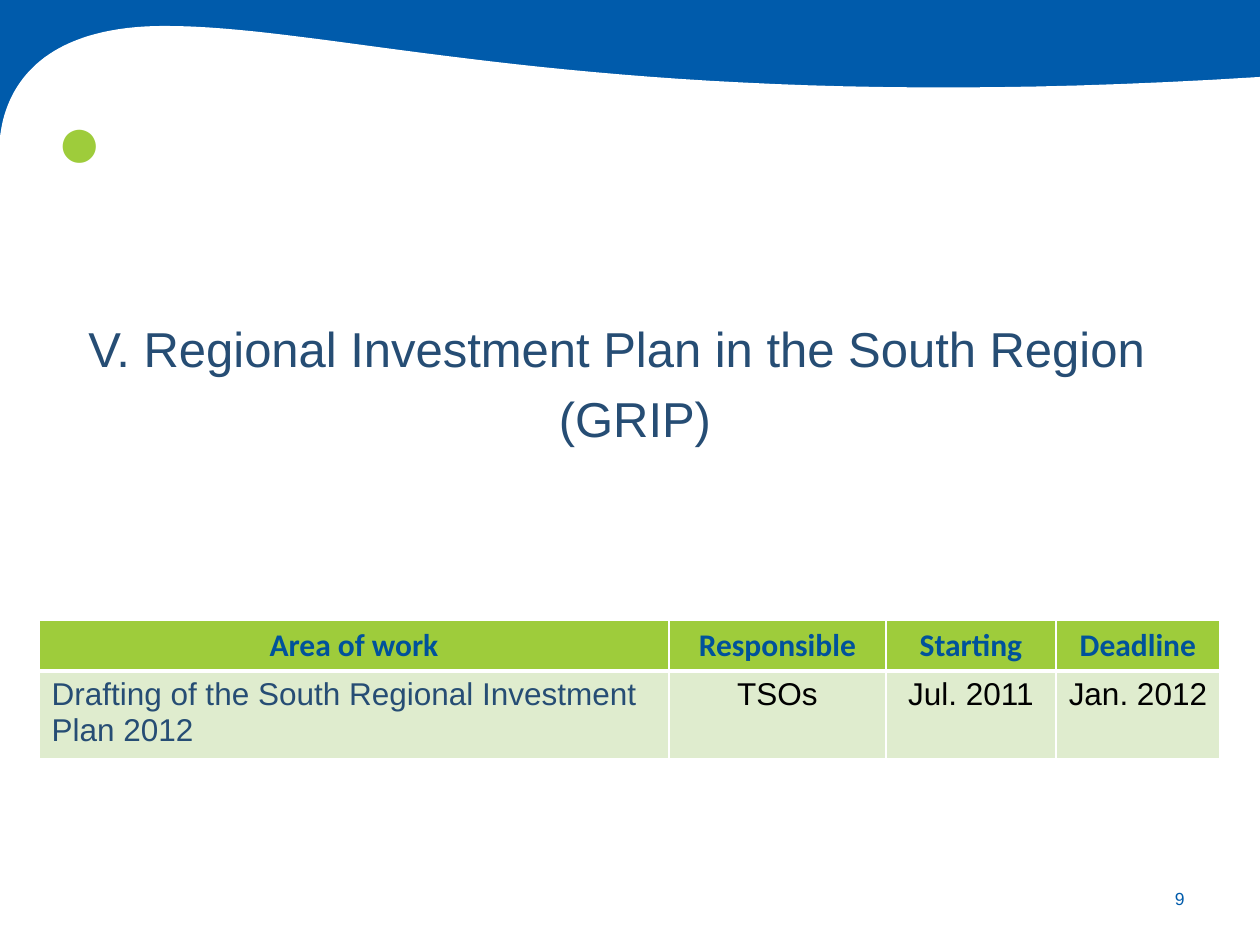
import lxml.etree
import pptx
import pptx.util
import pptx.dml.color
import pptx.enum.shapes
import pptx.enum.text
import pptx.oxml.ns

EMU_PER_PX = 914400 / 126
SLIDE_WIDTH, SLIDE_HEIGHT = 1260, 945
COLORS = {
    "blue": "005BAB",
    "header text": "00529B",
    "navy": "264D74",
    "green": "9ECC3B",
    "pale green": "DFECCE",
    "white": "FFFFFF",
    "black": "000000",
}
ALIGN = pptx.enum.text.PP_ALIGN
ANCHOR = pptx.enum.text.MSO_ANCHOR
WAVE_CURVES = [
    [(1260, 77), (617, 118), (348, 26), (165, 26)],
    [(165, 26), (29, 26), (4, 99), (0, 138)],
]
COLUMN_WIDTHS = [630, 217, 170, 164]
ROW_HEIGHTS = [51, 88]
TABLE_ROWS = [
    ["Area of work", "Responsible", "Starting", "Deadline"],
    ["Drafting of the South Regional Investment Plan 2012", "TSOs", "Jul. 2011", "Jan. 2012"],
]


def px(length):
    return pptx.util.Emu(round(length * EMU_PER_PX))


def color(name):
    return pptx.dml.color.RGBColor.from_string(COLORS[name])


def fill_plain(shape, color_name):
    shape.shadow.inherit = False
    shape.fill.solid()
    shape.fill.fore_color.rgb = color(color_name)
    shape.line.fill.background()


def curve_points(controls, steps=40):
    """Return points along a cubic Bezier curve."""
    for step in range(steps + 1):
        t = step / steps
        weights = [(1 - t) ** 3, 3 * t * (1 - t) ** 2, 3 * t * t * (1 - t), t ** 3]
        yield tuple(sum(w * point[axis] for w, point in zip(weights, controls)) for axis in (0, 1))


def add_wave_banner(slide):
    banner = slide.shapes.add_shape(
        pptx.enum.shapes.MSO_SHAPE.RECTANGLE, 0, 0, px(SLIDE_WIDTH), px(145))
    fill_plain(banner, "blue")
    points = [point for curve in WAVE_CURVES for point in curve_points(curve)]
    points += [(0, SLIDE_HEIGHT), (SLIDE_WIDTH, SLIDE_HEIGHT)]
    builder = slide.shapes.build_freeform(
        round(points[0][0] * 100), round(points[0][1] * 100), EMU_PER_PX / 100)
    builder.add_line_segments([(round(x * 100), round(y * 100)) for x, y in points[1:]])
    fill_plain(builder.convert_to_shape(), "white")


def format_paragraph(para, size, color_name, align, font="Arial", bold=False):
    para.alignment = align
    para.font.size = pptx.util.Pt(size)
    para.font.name = font
    para.font.bold = bold
    para.font.color.rgb = color(color_name)


def set_indent(para, left, first):
    properties = para._p.get_or_add_pPr()
    properties.set("marL", str(px(left)))
    properties.set("indent", str(px(first)))


def add_label(slide, text, bounds, size, color_name, align, anchor):
    box = slide.shapes.add_textbox(*map(px, bounds))
    frame = box.text_frame
    frame.word_wrap = True
    frame.vertical_anchor = anchor
    frame.text = text
    format_paragraph(frame.paragraphs[0], size, color_name, align)


def place_title(slide, text):
    title = slide.shapes.title
    # The placeholder comes first in the tree; bring it in front of the banner.
    title.element.getparent().append(title.element)
    title.left, title.top, title.width, title.height = map(px, (59, 300, 1103, 235))
    frame = title.text_frame
    frame.word_wrap = True
    frame.auto_size = pptx.enum.text.MSO_AUTO_SIZE.NONE
    frame.vertical_anchor = ANCHOR.TOP
    frame.text = text
    para = frame.paragraphs[0]
    set_indent(para, 49, -37)
    para.line_spacing = 1.2
    para.space_before = pptx.util.Pt(0)
    format_paragraph(para, 28, "navy", ALIGN.CENTER)


def set_borders(cell, bottom_width):
    properties = cell._tc.get_or_add_tcPr()
    widths = {"a:lnL": 1, "a:lnR": 1, "a:lnT": 1, "a:lnB": bottom_width}
    for index, (tag, width) in enumerate(widths.items()):
        line = lxml.etree.Element(pptx.oxml.ns.qn(tag), w=str(pptx.util.Pt(width)))
        solid = lxml.etree.SubElement(line, pptx.oxml.ns.qn("a:solidFill"))
        lxml.etree.SubElement(solid, pptx.oxml.ns.qn("a:srgbClr"), val=COLORS["white"])
        properties.insert(index, line)


def add_schedule_table(slide):
    table = slide.shapes.add_table(
        len(ROW_HEIGHTS), len(COLUMN_WIDTHS), px(39), px(620),
        px(sum(COLUMN_WIDTHS)), px(sum(ROW_HEIGHTS))).table
    for column, width in zip(table.columns, COLUMN_WIDTHS):
        column.width = px(width)
    for row_index, (row, height, texts) in enumerate(zip(table.rows, ROW_HEIGHTS, TABLE_ROWS)):
        row.height = px(height)
        header = row_index == 0
        for column_index, (cell, text) in enumerate(zip(row.cells, texts)):
            cell.text = text
            cell.fill.solid()
            cell.fill.fore_color.rgb = color("green" if header else "pale green")
            set_borders(cell, 3 if header else 1)
            para = cell.text_frame.paragraphs[0]
            if header:
                format_paragraph(para, 18, "header text", ALIGN.CENTER, "Calibri", True)
            elif column_index == 0:
                format_paragraph(para, 18, "navy", ALIGN.LEFT)
            else:
                format_paragraph(para, 18, "black", ALIGN.CENTER)


def main():
    deck = pptx.Presentation()
    deck.slide_width, deck.slide_height = px(SLIDE_WIDTH), px(SLIDE_HEIGHT)
    slide = deck.slides.add_slide(deck.slide_layouts.get_by_name("Title Only"))
    add_wave_banner(slide)
    add_label(slide, "9", (1126, 874, 71, 50), 10, "blue", ALIGN.RIGHT, ANCHOR.MIDDLE)
    add_label(slide, "●", (44, 72, 69, 118), 44, "green", ALIGN.CENTER, ANCHOR.BOTTOM)
    place_title(slide, "V. Regional Investment Plan in the South Region (GRIP)")
    add_schedule_table(slide)
    deck.save("out.pptx")


if __name__ == "__main__":
    main()
